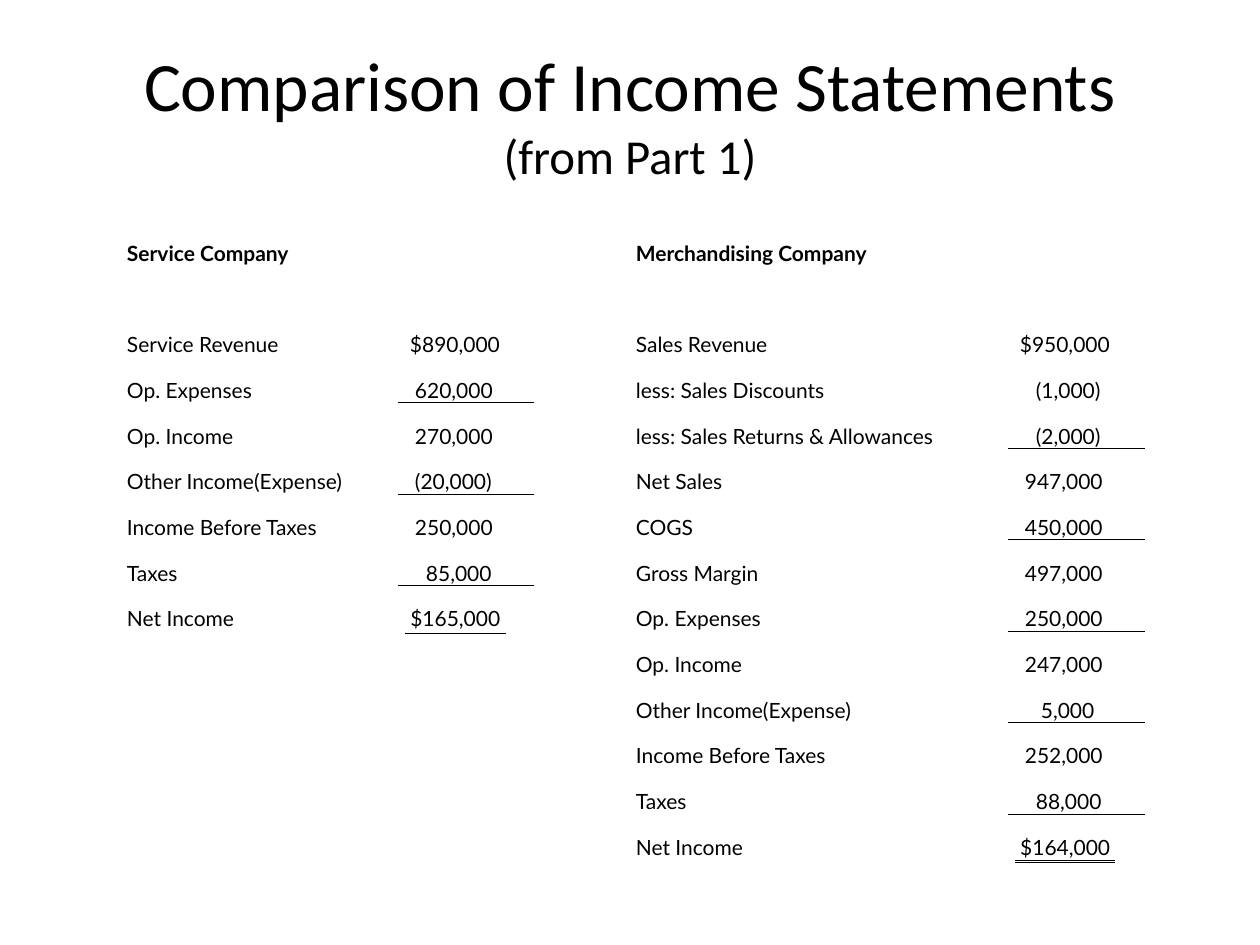
from lxml import etree
from pptx import Presentation
from pptx import util as u
from pptx.dml.color import RGBColor
from pptx.enum import text
from pptx.oxml import ns

SCALE = 914400 / 126
THEME = {
    "ink": "000000",
    "title_font": "Calibri",
    "body_font": "Lato",
    "title": 39.6,
    "subtitle": 27.9,
    "body": 12,
    "rule": 0.5,
}


def px(length):
    return u.Emu(round(length * SCALE))


def add_run(paragraph, words, size, font, bold=False):
    run = paragraph.add_run()
    run.text = words
    run.font.size = u.Pt(size)
    run.font.name = font
    run.font.bold = bold
    run.font.color.rgb = RGBColor.from_string(THEME["ink"])
    return run


presentation = Presentation()
presentation.slide_width = px(1260)
presentation.slide_height = px(945)
slide = presentation.slides.add_slide(presentation.slide_layouts[6])

title = slide.shapes.add_textbox(px(63), px(38), px(1134), px(151))
frame = title.text_frame
frame.word_wrap = True
frame.vertical_anchor = text.MSO_ANCHOR.MIDDLE
paragraph = frame.paragraphs[0]
paragraph.alignment = text.PP_ALIGN.CENTER
add_run(paragraph, "Comparison of Income Statements", THEME["title"], THEME["title_font"])
paragraph.add_line_break()
add_run(paragraph, "(from Part 1)", THEME["subtitle"], THEME["title_font"])

service = [
    ("Service Revenue", "$890,000", 11, False),
    ("Op. Expenses", "620,000", 16, True),
    ("Op. Income", "270,000", 16, False),
    ("Other Income(Expense)", "(20,000)", 16, True),
    ("Income Before Taxes", "250,000", 16, False),
    ("Taxes", "85,000", 27, True),
    ("Net Income", "$165,000", 11, False),
]
merchandising = [
    ("Sales Revenue", "$950,000", 11, False),
    ("less: Sales Discounts", "(1,000)", 27, False),
    ("less: Sales Returns & Allowances", "(2,000)", 27, True),
    ("Net Sales", "947,000", 16, False),
    ("COGS", "450,000", 16, True),
    ("Gross Margin", "497,000", 16, False),
    ("Op. Expenses", "250,000", 16, True),
    ("Op. Income", "247,000", 16, False),
    ("Other Income(Expense)", "5,000", 32, True),
    ("Income Before Taxes", "252,000", 16, False),
    ("Taxes", "88,000", 27, True),
    ("Net Income", "$164,000", 11, False),
]
statements = [
    (0, "Service Company", service),
    (3, "Merchandising Company", merchandising),
]
column_widths = [273, 136, 100, 374, 135]
table_height = 640
first_row = 2
row_count = first_row + len(merchandising)

table = slide.shapes.add_table(
    row_count, len(column_widths), px(126), px(220), px(sum(column_widths)), px(table_height)
).table
table.first_row = False
table.horz_banding = False
for column, width in zip(table.columns, column_widths):
    column.width = px(width)
for row in table.rows:
    row.height = px(table_height / row_count)
    for cell in row.cells:
        cell.fill.background()
        cell.vertical_anchor = text.MSO_ANCHOR.BOTTOM
        cell.margin_left = cell.margin_right = cell.margin_top = px(1)
        cell.margin_bottom = 0

for label_column, company, lines in statements:
    heading = table.cell(0, label_column).text_frame.paragraphs[0]
    add_run(heading, company, THEME["body"], THEME["body_font"], bold=True)
    for row_index, (label, amount, indent, ruled) in enumerate(lines, first_row):
        label_cell = table.cell(row_index, label_column)
        amount_cell = table.cell(row_index, label_column + 1)
        add_run(label_cell.text_frame.paragraphs[0], label, THEME["body"], THEME["body_font"])
        is_total = label == "Net Income"
        amount_cell.margin_left = px(indent - 5 if is_total else indent)
        run = add_run(
            amount_cell.text_frame.paragraphs[0],
            f" {amount} " if is_total else amount,
            THEME["body"],
            THEME["body_font"],
        )
        if is_total:
            run.font.underline = text.MSO_UNDERLINE.DOUBLE_LINE
        if ruled:
            next_cell = table.cell(row_index + 1, label_column + 1)
            for edge_cell, edge in ((amount_cell, "a:lnB"), (next_cell, "a:lnT")):
                line = etree.Element(ns.qn(edge), w=str(u.Pt(THEME["rule"])))
                fill = etree.SubElement(line, ns.qn("a:solidFill"))
                etree.SubElement(fill, ns.qn("a:srgbClr"), val=THEME["ink"])
                edge_cell._tc.get_or_add_tcPr().insert(0, line)

presentation.save("out.pptx")
